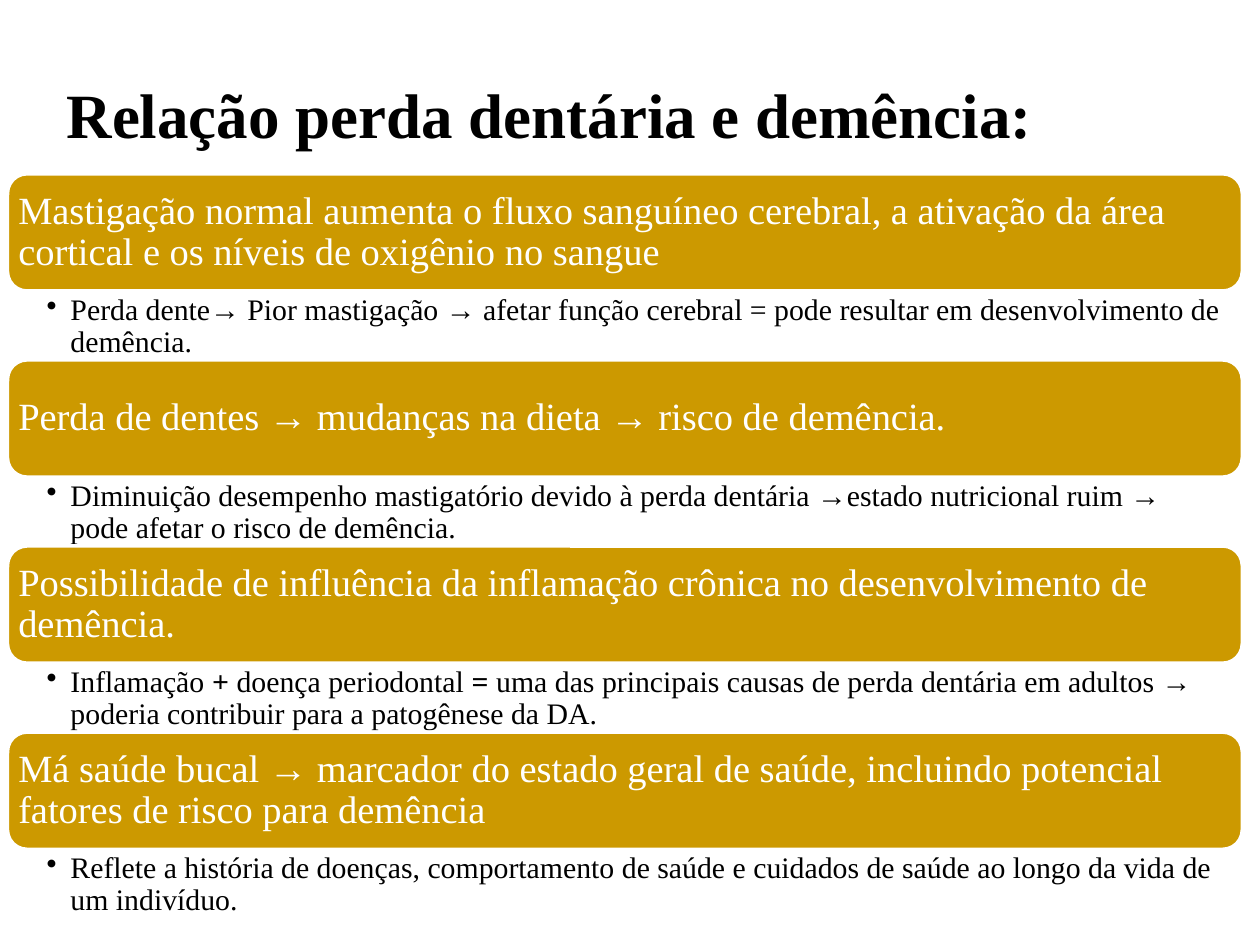
from lxml import etree
from pptx import Presentation
from pptx.dml.color import RGBColor
from pptx.enum import shapes, text
from pptx.oxml import ns
from pptx.util import Inches, Pt

FONT = "Times New Roman"
LEFT, WIDTH = Inches(0.06), Inches(9.8)
FIRST_TOP, STEP = 1.38, 1.477
BAR_HEIGHT, DETAIL_HEIGHT = 0.93, 0.55

# Each topic has a heading and the runs of its detail, with a bold flag per run.
TOPICS = [
    ("Mastigação normal aumenta o fluxo sanguíneo cerebral, a ativação da área "
     "cortical e os níveis de oxigênio no sangue",
     [("Perda dente→ Pior mastigação → afetar função cerebral = pode resultar em "
       "desenvolvimento de demência.", False)]),
    ("Perda de dentes → mudanças na dieta → risco de demência.",
     [("Diminuição desempenho mastigatório devido à perda dentária →estado "
       "nutricional ruim → pode afetar o risco de demência.", False)]),
    ("Possibilidade de influência da inflamação crônica no desenvolvimento de demência.",
     [("Inflamação ", False), ("+", True), (" doença periodontal ", False), ("=", True),
      (" uma das principais causas de perda dentária em adultos → poderia contribuir "
       "para a patogênese da DA.", False)]),
    ("Má saúde bucal → marcador do estado geral de saúde, incluindo potencial "
     "fatores de risco para demência",
     [("Reflete a história de doenças, comportamento de saúde e cuidados de saúde ao "
       "longo da vida de um indivíduo.", False)]),
]


def color(value):
    return RGBColor.from_string(value)


def style(paragraph, size, value):
    paragraph.alignment = text.PP_ALIGN.LEFT
    paragraph.font.name = FONT
    paragraph.font.size = Pt(size)
    paragraph.font.color.rgb = color(value)


deck = Presentation()
deck.slide_width, deck.slide_height = Inches(10), Inches(7.5)
page = deck.slides.add_slide(deck.slide_layouts[6])

title = page.shapes.add_textbox(Inches(0.43), Inches(0.08), Inches(9.13), Inches(1.17))
title.text_frame.word_wrap = True
title.text_frame.vertical_anchor = text.MSO_ANCHOR.BOTTOM
para = title.text_frame.paragraphs[0]
para.text = "Relação perda dentária e demência:"
style(para, 36, "000000")
para.font.bold = True

for index, (heading, detail_runs) in enumerate(TOPICS):
    top = FIRST_TOP + index * STEP

    bar = page.shapes.add_shape(shapes.MSO_SHAPE.ROUNDED_RECTANGLE,
                                LEFT, Inches(top), WIDTH, Inches(BAR_HEIGHT))
    bar.shadow.inherit = False
    bar.fill.solid()
    bar.fill.fore_color.rgb = color("CC9900")
    bar.line.color.rgb = color("FFFFFF")
    bar.line.width = Pt(2)
    frame = bar.text_frame
    frame.word_wrap = True
    frame.vertical_anchor = text.MSO_ANCHOR.MIDDLE
    # The rounded corners already push the text in by about 0.05 inch.
    frame.margin_left = frame.margin_right = Inches(0.04)
    frame.margin_top = frame.margin_bottom = Inches(0.04)
    para = frame.paragraphs[0]
    para.text = heading
    para.line_spacing = 0.9
    style(para, 22, "FFFFFF")

    detail = page.shapes.add_textbox(LEFT, Inches(top + BAR_HEIGHT),
                                     WIDTH, Inches(DETAIL_HEIGHT))
    frame = detail.text_frame
    frame.word_wrap = True
    frame.margin_left, frame.margin_right = Inches(0.31), Inches(0.17)
    frame.margin_top = frame.margin_bottom = Inches(0.03)
    para = frame.paragraphs[0]
    para.line_spacing = 0.9
    properties = para._p.get_or_add_pPr()
    properties.set("marL", str(Inches(0.19)))
    properties.set("indent", str(-Inches(0.19)))
    etree.SubElement(properties, ns.qn("a:buChar")).set("char", "•")
    style(para, 17, "000000")
    for words, bold in detail_runs:
        span = para.add_run()
        span.text = words
        if bold:
            span.font.bold = True

deck.save("out.pptx")
